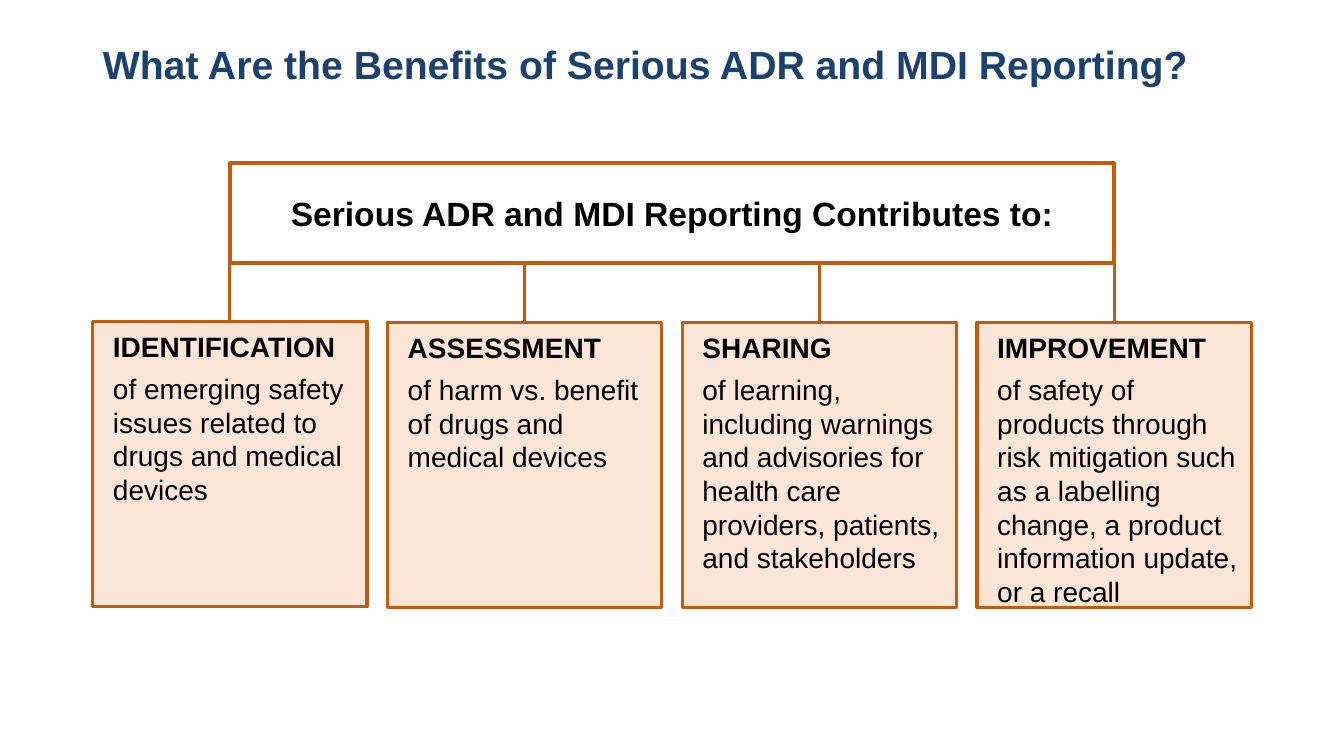
from dataclasses import dataclass

from lxml import etree
from pptx import Presentation
from pptx import util as u
from pptx.dml.color import RGBColor
from pptx.enum import shapes, text
from pptx.oxml import ns

COLORS = {
    "title": "1B416F",
    "text": "000000",
    "line": "C55A11",
    "card": "FBE5D6",
    "header": "FFFFFF",
}
CARD_LEFT, CARD_WIDTH, CARD_HEIGHT = 0.92, 2.72, 2.83
CARD_SPAN = 8.77
HEADER_TOP, HEADER_HEIGHT = 1.62, 0.99
STEM_TOP, STEM_BOTTOM = HEADER_TOP + HEADER_HEIGHT, 4.2


@dataclass
class Benefit:
    heading: str
    detail: str
    top: float = 3.2
    right_inset: float = 0.1


BENEFITS = [
    Benefit("IDENTIFICATION",
            "of emerging safety issues related to drugs and medical devices",
            top=3.19),
    Benefit("ASSESSMENT", "of harm vs. benefit of drugs and medical devices"),
    Benefit("SHARING",
            "of learning, including warnings and advisories for health care "
            "providers, patients, and stakeholders",
            right_inset=0.12),
    Benefit("IMPROVEMENT",
            "of safety of products through risk mitigation such as a labelling "
            "change, a product information update, or a recall",
            right_inset=0.04),
]


def rgb(name: str) -> RGBColor:
    return RGBColor.from_string(COLORS[name])


def write(p, content: str, size: float, color: str = "text", bold: bool = False,
          align=text.PP_ALIGN.LEFT, before: float = 0, spacing=None) -> None:
    p.alignment = align
    p.space_before = u.Pt(before)
    p.line_spacing = spacing
    r = p.add_run()
    r.text = content
    r.font.name = "Arial"
    r.font.size = u.Pt(size)
    r.font.bold = bold
    r.font.color.rgb = rgb(color)


def set_frame(tf, anchor, left: float = 0.1, top: float = 0.05,
              right: float = 0.1, bottom: float = 0.05) -> None:
    tf.word_wrap = True
    tf.auto_size = text.MSO_AUTO_SIZE.NONE
    tf.vertical_anchor = anchor
    tf.margin_left, tf.margin_top = u.Inches(left), u.Inches(top)
    tf.margin_right, tf.margin_bottom = u.Inches(right), u.Inches(bottom)


def add_box(s, left: float, top: float, width: float, height: float,
            fill: str, weight: float):
    sp = s.shapes.add_shape(shapes.MSO_SHAPE.RECTANGLE, u.Inches(left), u.Inches(top),
                            u.Inches(width), u.Inches(height))
    sp.shadow.inherit = False
    sp.fill.solid()
    sp.fill.fore_color.rgb = rgb(fill)
    sp.line.color.rgb = rgb("line")
    sp.line.width = u.Pt(weight)
    return sp


def add_stem(s, x: float) -> None:
    stem = s.shapes.add_connector(shapes.MSO_CONNECTOR.STRAIGHT, u.Inches(x),
                                  u.Inches(STEM_TOP), u.Inches(x), u.Inches(STEM_BOTTOM))
    stem.line.color.rgb = rgb("line")
    stem.line.width = u.Pt(2.25)
    etree.SubElement(stem._element.spPr, ns.qn("a:effectLst"))


def add_card(s, benefit: Benefit, left: float) -> None:
    sp = add_box(s, left, benefit.top, CARD_WIDTH, CARD_HEIGHT, "card", 2.25)
    tf = sp.text_frame
    set_frame(tf, text.MSO_ANCHOR.TOP, 0.2, 0.08, benefit.right_inset, 0.28)
    write(tf.paragraphs[0], benefit.heading, 20, bold=True, before=6, spacing=u.Pt(24))
    write(tf.add_paragraph(), benefit.detail, 20, before=6, spacing=u.Pt(24))


def add_header(s, left: float, width: float) -> None:
    sp = add_box(s, left, HEADER_TOP, width, HEADER_HEIGHT, "header", 3)
    tf = sp.text_frame
    set_frame(tf, text.MSO_ANCHOR.MIDDLE)
    write(tf.paragraphs[0], "Serious ADR and MDI Reporting Contributes to:", 24,
          bold=True, align=text.PP_ALIGN.CENTER)


def add_title(s) -> None:
    sp = s.shapes.title
    sp.left, sp.top = u.Inches(0.92), u.Inches(0.4)
    sp.width, sp.height = u.Inches(11.5), u.Inches(1.45)
    set_frame(sp.text_frame, text.MSO_ANCHOR.TOP)
    write(sp.text_frame.paragraphs[0],
          "What Are the Benefits of Serious ADR and MDI Reporting?", 28,
          color="title", bold=True, spacing=0.9)


def main() -> None:
    prs = Presentation()
    prs.slide_width, prs.slide_height = u.Inches(13.33), u.Inches(7.5)
    s = prs.slides.add_slide(prs.slide_layouts[5])
    add_title(s)

    step = CARD_SPAN / (len(BENEFITS) - 1)
    lefts = [CARD_LEFT + i * step for i in range(len(BENEFITS))]
    for left in lefts:
        add_stem(s, left + CARD_WIDTH / 2)
    for benefit, left in zip(BENEFITS, lefts):
        add_card(s, benefit, left)
    add_header(s, CARD_LEFT + CARD_WIDTH / 2, CARD_SPAN)
    prs.save("out.pptx")


if __name__ == "__main__":
    main()
